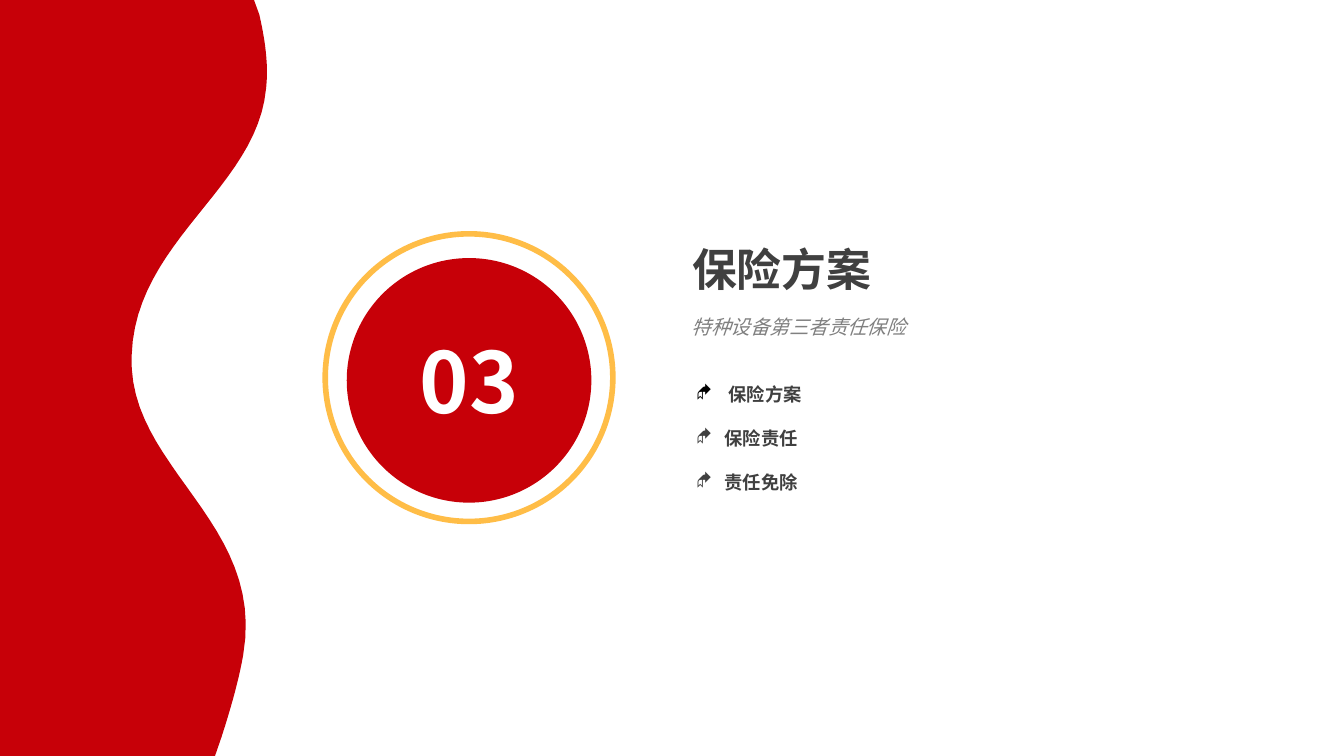
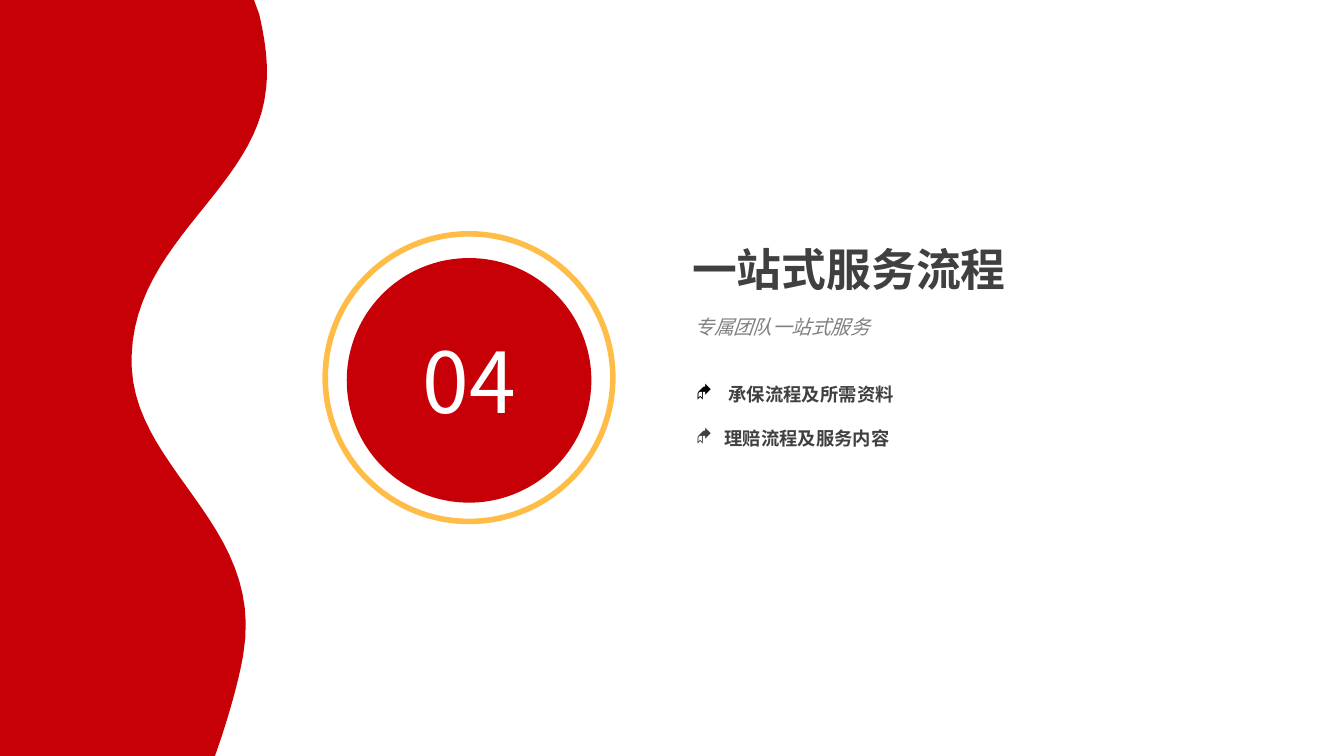
from dataclasses import dataclass

from lxml.etree import SubElement
from pptx import Presentation
from pptx.dml.color import RGBColor
from pptx.enum.shapes import MSO_SHAPE
from pptx.enum.text import MSO_ANCHOR, MSO_AUTO_SIZE, PP_ALIGN
from pptx.oxml.ns import qn
from pptx.util import Inches, Pt

RED = RGBColor(0xC7, 0x00, 0x08)
AMBER = RGBColor(0xFF, 0xBD, 0x47)
WHITE = RGBColor(0xFF, 0xFF, 0xFF)
BLACK = RGBColor(0x00, 0x00, 0x00)
DARK = RGBColor(0x40, 0x40, 0x40)
GRAY = RGBColor(0x80, 0x80, 0x80)
FONT = "Noto Sans CJK SC"
BULLET_FONT = "Wingdings"
TITLE_AND_CONTENT = 1

# Widescreen 16:9
SLIDE_WIDTH = Inches(10)
SLIDE_HEIGHT = SLIDE_WIDTH * 9 // 16

# Edge of the red wave: each curve is two control points and an end point
WAVE_TOP = [(0, 0), (1.89, 0), (1.93, 0.11)]
WAVE_CURVES = [
    [(1.97, 0.29), (2, 0.47), (1.98, 0.66)],
    [(1.91, 1.4), (1.01, 1.79), (0.98, 2.64)],
    [(0.94, 3.48), (1.98, 3.88), (1.81, 4.87)],
    [(1.78, 5.05), (1.72, 5.26), (1.65, 5.48)],
]
WAVE_BOTTOM = [(1.6, SLIDE_HEIGHT / Inches(1)), (0, SLIDE_HEIGHT / Inches(1))]
CURVE_STEPS = 24


@dataclass
class Box:
    left: float
    top: float
    width: float
    height: float

    def lengths(self) -> list[int]:
        return [Inches(v) for v in (self.left, self.top, self.width, self.height)]


@dataclass
class TextStyle:
    size: float
    color: RGBColor
    bold: bool = False
    italic: bool = False


@dataclass
class Section:
    number: str
    number_bold: bool
    title: str
    title_width: float
    subtitle: str
    subtitle_box: Box
    topics: list[str]


SECTIONS = [
    Section("03", True, "保险方案", 2.49, "特种设备第三者责任保险",
            Box(5.05, 2.21, 3.83, 0.63), ["保险方案", "保险责任", "责任免除"]),
    Section("04", False, "一站式服务流程", 2.8, "专属团队一站式服务",
            Box(5.07, 2.21, 2.95, 0.36), ["承保流程及所需资料", "理赔流程及服务内容"]),
]


def place(shape, box: Box) -> None:
    shape.left, shape.top, shape.width, shape.height = box.lengths()


def style_paragraph(paragraph, style: TextStyle, spacing: float = 1.0) -> None:
    paragraph.line_spacing = spacing
    paragraph.space_before = Pt(0)
    for run in paragraph.runs:
        font = run.font
        font.name = FONT
        font.size = Pt(style.size)
        font.bold = style.bold
        font.italic = style.italic
        font.color.rgb = style.color
        SubElement(run._r.get_or_add_rPr(), qn("a:ea")).set("typeface", FONT)


def set_up_frame(shape):
    frame = shape.text_frame
    frame.word_wrap = True
    frame.auto_size = MSO_AUTO_SIZE.SHAPE_TO_FIT_TEXT
    frame.vertical_anchor = MSO_ANCHOR.TOP
    return frame


def write_line(shape, text: str, style: TextStyle, align=PP_ALIGN.LEFT,
               spacing: float = 1.0) -> None:
    paragraph = set_up_frame(shape).paragraphs[0]
    paragraph.text = text
    paragraph.alignment = align
    style_paragraph(paragraph, style, spacing)


def add_diamond_bullet(paragraph, color: RGBColor, indent: float) -> None:
    properties = paragraph._p.get_or_add_pPr()
    properties.set("marL", str(Inches(indent)))
    properties.set("indent", str(-Inches(indent)))
    bullet_color = SubElement(properties, qn("a:buClr"))
    SubElement(bullet_color, qn("a:srgbClr")).set("val", str(color))
    bullet_font = SubElement(properties, qn("a:buFont"))
    bullet_font.set("typeface", BULLET_FONT)
    bullet_font.set("charset", "2")
    SubElement(properties, qn("a:buChar")).set("char", "◆")


def write_topics(body, topics: list[str]) -> None:
    frame = set_up_frame(body)
    frame.text = "\n".join(topics)
    for index, paragraph in enumerate(frame.paragraphs):
        # The leading topic has a black bullet and a slightly wider gap
        bullet_color, indent = (DARK, 0.21) if index else (BLACK, 0.24)
        add_diamond_bullet(paragraph, bullet_color, indent)
        style_paragraph(paragraph, TextStyle(9.8, DARK, bold=True), spacing=2.0)


def curve_points(start, control_1, control_2, end) -> list[tuple[float, float]]:
    points = []
    for step in range(1, CURVE_STEPS + 1):
        t = step / CURVE_STEPS
        weights = ((1 - t) ** 3, 3 * t * (1 - t) ** 2, 3 * t * t * (1 - t), t ** 3)
        corners = (start, control_1, control_2, end)
        points.append(tuple(sum(w * c[axis] for w, c in zip(weights, corners))
                            for axis in (0, 1)))
    return points


def add_wave(slide) -> None:
    outline = list(WAVE_TOP)
    for curve in WAVE_CURVES:
        outline += curve_points(outline[-1], *curve)
    outline += WAVE_BOTTOM
    corners = [(Inches(x), Inches(y)) for x, y in outline]
    builder = slide.shapes.build_freeform(*corners[0])
    builder.add_line_segments(corners[1:], close=True)
    wave = builder.convert_to_shape()
    wave.shadow.inherit = False
    wave.fill.solid()
    wave.fill.fore_color.rgb = RED
    wave.line.fill.background()


def add_circle(slide, box: Box, fill: RGBColor, outline: RGBColor | None = None) -> None:
    circle = slide.shapes.add_shape(MSO_SHAPE.OVAL, *box.lengths())
    circle.shadow.inherit = False
    circle.fill.solid()
    circle.fill.fore_color.rgb = fill
    if outline is None:
        circle.line.fill.background()
    else:
        circle.line.color.rgb = outline
        circle.line.width = Pt(3)


def add_section_slide(deck, section: Section) -> None:
    slide = deck.slides.add_slide(deck.slide_layouts[TITLE_AND_CONTENT])

    # Red wave and number badge
    add_wave(slide)
    add_circle(slide, Box(2.42, 1.74, 2.14, 2.14), WHITE, AMBER)
    add_circle(slide, Box(2.58, 1.92, 1.82, 1.82), RED)
    number = slide.shapes.add_textbox(*Box(2.97, 2.4, 1.04, 0.86).lengths())
    write_line(number, section.number,
               TextStyle(45, WHITE, bold=section.number_bold), PP_ALIGN.CENTER)

    # Title and subtitle
    title = slide.shapes.title
    place(title, Box(5.05, 1.75, section.title_width, 0.5))
    write_line(title, section.title, TextStyle(24, DARK, bold=True))
    subtitle = slide.shapes.add_textbox(*section.subtitle_box.lengths())
    write_line(subtitle, section.subtitle, TextStyle(10.5, GRAY, italic=True), spacing=1.5)

    # Topic list
    body = slide.placeholders[1]
    place(body, Box(5.08, 2.64, 3.49, 0.1 + 0.33 * len(section.topics)))
    write_topics(body, section.topics)


def main() -> None:
    deck = Presentation()
    deck.slide_width = SLIDE_WIDTH
    deck.slide_height = SLIDE_HEIGHT
    for section in SECTIONS:
        add_section_slide(deck, section)
    deck.save("out.pptx")


if __name__ == "__main__":
    main()
